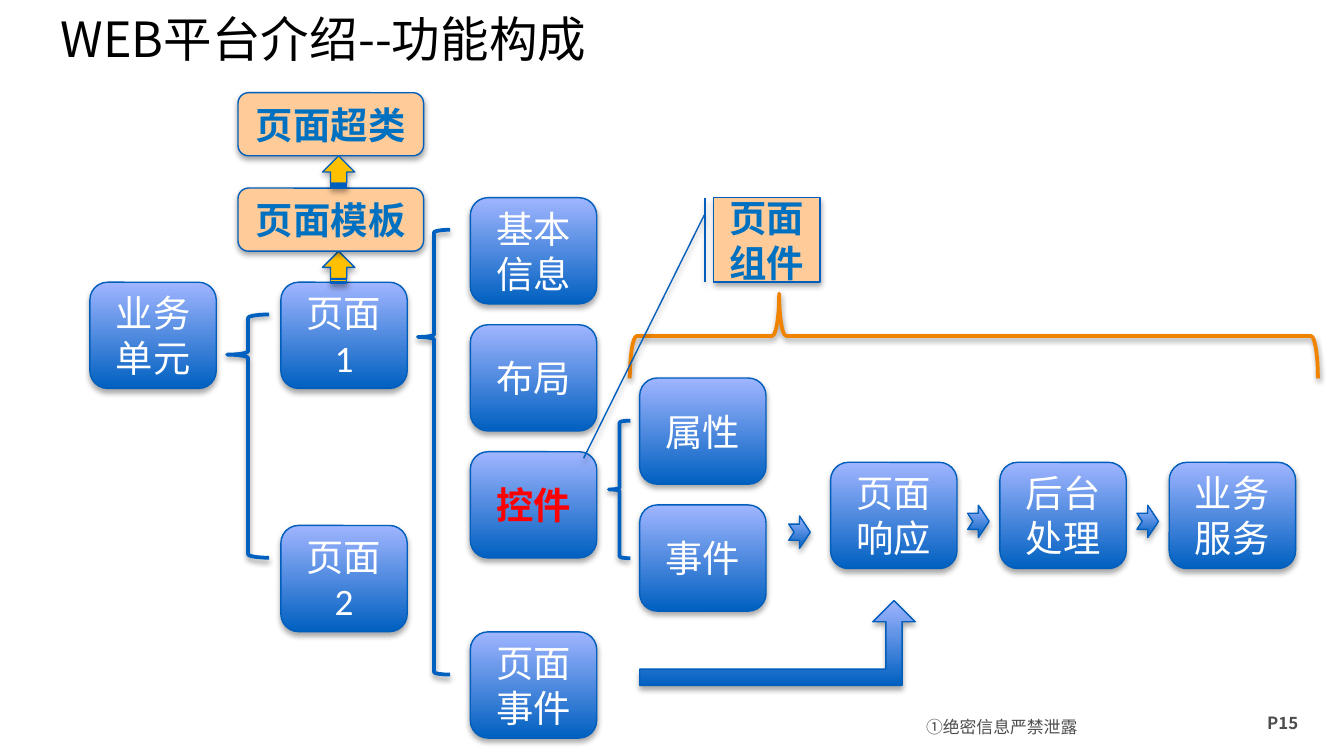
from dataclasses import dataclass
from typing import Optional

from lxml import etree
from pptx import Presentation
from pptx.dml.color import RGBColor
from pptx.enum.shapes import MSO_SHAPE
from pptx.enum.text import MSO_ANCHOR, MSO_AUTO_SIZE, PP_ALIGN
from pptx.oxml.ns import qn
from pptx.util import Pt

ROUND_BOX = MSO_SHAPE.ROUNDED_RECTANGLE
CALLOUT = MSO_SHAPE.LINE_CALLOUT_1_BORDER_AND_ACCENT_BAR
BRACE = MSO_SHAPE.LEFT_BRACE
NOTCHED = MSO_SHAPE.NOTCHED_RIGHT_ARROW
STRIPED = MSO_SHAPE.STRIPED_RIGHT_ARROW
BENT_UP = MSO_SHAPE.BENT_UP_ARROW
MIDDLE = MSO_ANCHOR.MIDDLE
LEFT, CENTER, JUSTIFY = PP_ALIGN.LEFT, PP_ALIGN.CENTER, PP_ALIGN.JUSTIFY

BLUE = RGBColor(0x00, 0x60, 0xC0)
LIGHT_BLUE = RGBColor(0xA0, 0xB5, 0xFF)
OUTLINE = RGBColor(0x00, 0x5E, 0xBC)
PEACH = RGBColor(0xFF, 0xCC, 0x99)
GOLD = RGBColor(0xFF, 0xC0, 0x00)
ORANGE = RGBColor(0xF0, 0x83, 0x00)
TEXT_BLUE = RGBColor(0x00, 0x70, 0xC0)
RED = RGBColor(0xFF, 0x00, 0x00)
WHITE = RGBColor(0xFF, 0xFF, 0xFF)
BLACK = RGBColor(0x00, 0x00, 0x00)
GRAY = RGBColor(0x4D, 0x4D, 0x4D)

HEAD_FONT, BODY_FONT = "Noto Sans CJK SC", "Calibri"
BOX_W, BOX_H = 67.7, 56.9
UNIT_X, PAGE_X, PART_X, MEMBER_X = 48.2, 150.5, 252, 342.7
FLOW_X, FLOW_Y, FLOW_STEP = 445, 247.7, 90.7


@dataclass
class Node:
    text: str
    left: float
    top: float
    color: RGBColor = WHITE
    bold: bool = False


@dataclass
class Figure:
    """A filled shape; fill None stands for the blue gradient."""
    kind: MSO_SHAPE
    left: float
    top: float
    width: float
    height: float
    fill: Optional[RGBColor] = None
    adjustments: tuple = ()
    rotation: float = 0
    text: str = ""


@dataclass
class Brace:
    left: float
    top: float
    width: float
    height: float
    point: float
    color: RGBColor = BLUE
    rotation: float = 0


NODES = [
    Node("业务单元", UNIT_X, 151.2),
    Node("页面1", PAGE_X, 151.2),
    Node("页面2", PAGE_X, 281.5),
    Node("基本信息", PART_X, 105.9),
    Node("布局", PART_X, 174),
    Node("控件", PART_X, 242, RED, True),
    Node("页面事件", PART_X, 338.5),
    Node("属性", MEMBER_X, 202.5),
    Node("事件", MEMBER_X, 270.5),
] + [Node(text, FLOW_X + i * FLOW_STEP, FLOW_Y)
     for i, text in enumerate(("页面响应", "后台处理", "业务服务"))]

BRACES = [
    Brace(223.9, 123.1, 17.3, 238.3, 0.241),
    Brace(121.7, 168.5, 22.5, 130.3, 0.165),
    Brace(326.2, 225.4, 11.5, 73.7, 0.5),
    Brace(499, -4.3, 45.4, 368.6, 0.783, ORANGE, 90),
]

FIGURES = [
    Figure(NOTCHED, 422.6, 276.5, 11.5, 17.3),
    Figure(NOTCHED, 518.4, 270.7, 11.5, 17.3),
    Figure(NOTCHED, 609.1, 270.7, 11.5, 17.3),
    Figure(BENT_UP, MEMBER_X, 321.8, 147.6, 45.4, None, (0.191, 0.25, 0.25)),
    Figure(ROUND_BOX, 127.5, 49.7, 99.4, 33.8, PEACH, text="页面超类"),
    Figure(STRIPED, 172.8, 134.6, 17.3, 17.3, GOLD, rotation=270),
    Figure(CALLOUT, 382.4, 105.9, 56.9, 45.3, PEACH,
           (0.188, -0.083, 3.083, -1.226), text="页面组件"),
    Figure(ROUND_BOX, 127.5, 100.8, 99.4, 33.8, PEACH, text="页面模板"),
    Figure(STRIPED, 172.8, 83.5, 17.3, 17.3, GOLD, rotation=270),
]


def style_text(tf, text: str, size: float, color: RGBColor, font: str,
               bold: bool = False, align=LEFT) -> None:
    tf.text = text
    p = tf.paragraphs[0]
    p.alignment = align
    r = p.runs[0]
    r.font.size, r.font.name, r.font.bold = Pt(size), font, bold
    r.font.color.rgb = color


def set_shadow(sp, alpha: int, distance: float) -> None:
    """Give the shape a soft black shadow straight below it."""
    sp.shadow.inherit = False
    effects = sp._element.spPr.find(qn("a:effectLst"))
    shadow = etree.SubElement(effects, qn("a:outerShdw"), blurRad=str(Pt(3.1)),
                              dist=str(Pt(distance)), dir="5400000", rotWithShape="0")
    black = etree.SubElement(shadow, qn("a:srgbClr"), val="000000")
    etree.SubElement(black, qn("a:alpha"), val=str(alpha * 1000))


def add_figure(s, fig: Figure, color: RGBColor = TEXT_BLUE, bold: bool = True) -> None:
    sp = s.shapes.add_shape(fig.kind, Pt(fig.left), Pt(fig.top),
                            Pt(fig.width), Pt(fig.height))
    sp.rotation = fig.rotation
    for i, value in enumerate(fig.adjustments):
        sp.adjustments[i] = value
    if fig.fill is None:
        sp.fill.gradient()
        sp.fill.gradient_angle = 90
        for stop, stop_color in zip(sp.fill.gradient_stops, (BLUE, LIGHT_BLUE)):
            stop.color.rgb = stop_color
    else:
        sp.fill.solid()
        sp.fill.fore_color.rgb = fig.fill
    sp.line.color.rgb, sp.line.width = OUTLINE, Pt(0.75)
    set_shadow(sp, 35, 1.8)
    if fig.text:
        sp.text_frame.vertical_anchor = MIDDLE
        style_text(sp.text_frame, fig.text, 20, color, BODY_FONT, bold, CENTER)


def add_brace(s, brace: Brace) -> None:
    sp = s.shapes.add_shape(BRACE, Pt(brace.left), Pt(brace.top),
                            Pt(brace.width), Pt(brace.height))
    sp.rotation = brace.rotation
    sp.adjustments[0], sp.adjustments[1] = 0.083, brace.point
    sp.fill.background()
    sp.line.color.rgb, sp.line.width = brace.color, Pt(2)
    set_shadow(sp, 38, 1.6)


def add_footer(s) -> None:
    note = s.shapes.add_textbox(Pt(490.3), Pt(380.2), Pt(127.4), Pt(19.4))
    tf = note.text_frame
    tf.word_wrap = True
    tf.margin_left = tf.margin_right = Pt(5.8)
    tf.margin_top = tf.margin_bottom = Pt(0.7)
    style_text(tf, "①绝密信息严禁泄露", 9, GRAY, HEAD_FONT, align=JUSTIFY)
    tf.paragraphs[0].line_spacing = Pt(14)

    number = s.shapes.add_textbox(Pt(671.8), Pt(378), Pt(40.3), Pt(18))
    number.text_frame.word_wrap = True
    style_text(number.text_frame, "P15", 9, GRAY, HEAD_FONT, True)


def main() -> None:
    prs = Presentation()
    prs.slide_width, prs.slide_height = Pt(720), Pt(405)
    s = prs.slides.add_slide(prs.slide_layouts[5])
    title = s.shapes.title
    title.left, title.top, title.width, title.height = Pt(25.2), Pt(0), Pt(561.6), Pt(41)
    title.text_frame.auto_size = MSO_AUTO_SIZE.NONE
    title.text_frame.vertical_anchor = MIDDLE
    style_text(title.text_frame, "WEB平台介绍--功能构成", 26, BLACK, HEAD_FONT)
    add_footer(s)
    for node in NODES:
        box = Figure(ROUND_BOX, node.left, node.top, BOX_W, BOX_H, text=node.text)
        add_figure(s, box, node.color, node.bold)
    for brace in BRACES:
        add_brace(s, brace)
    for fig in FIGURES:
        add_figure(s, fig)
    prs.save("out.pptx")


if __name__ == "__main__":
    main()
